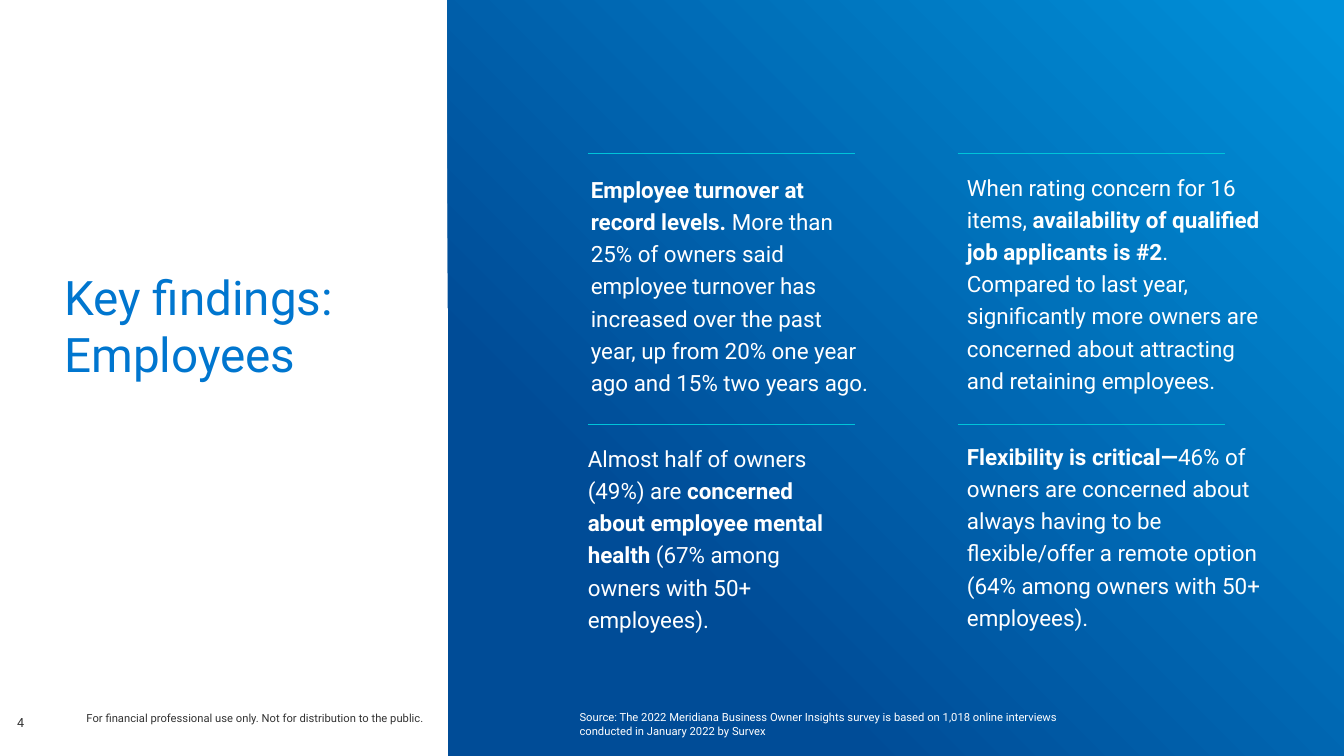
"""Build the employee key findings slide."""
from pptx import Presentation
from pptx.dml.color import RGBColor
from pptx.enum.shapes import MSO_CONNECTOR as CONNECTOR, MSO_SHAPE as SHAPE
from pptx.enum.text import MSO_ANCHOR as ANCHOR
from pptx.oxml.ns import qn
from pptx.util import Inches, Pt
from lxml.etree import SubElement

FONT = "Roboto"
WHITE, TITLE_BLUE, GRAY, CYAN = "FFFFFF", "0076CF", "333333", "00C4D9"
GRADIENT = [("004C97", 0.25), ("0091DA", 0.99)]
PANEL_LEFT = 4.44
RULE_LEFTS, RULE_TOPS, RULE_WIDTH = (5.83, 9.5), (1.52, 4.21), 2.65

FINDINGS = [
    ((5.86, 1.69, 2.78, 2.35), [
        ("Employee turnover at record levels. ", True),
        ("More than 25% of owners said employee turnover has increased over the past year, "
         "up from 20% one year ago and 15% two years ago.", False)]),
    ((9.59, 1.67, 2.98, 2.33), [
        ("When rating concern for 16 items, ", False),
        ("availability of qualified job applicants is #2", True),
        (". Compared to last year, significantly more owners are concerned about "
         "attracting and retaining employees.", False)]),
    ((5.83, 4.36, 2.65, 2.17), [
        ("Almost half of owners (49%) are ", False),
        ("concerned about employee mental health ", True),
        ("(67% among owners with 50+ employees).", False)]),
    ((9.59, 4.34, 3.12, 2.17), [
        ("Flexibility is critical—", True),
        ("46% of owners are concerned about always having to be flexible/offer a remote "
         "option (64% among owners with 50+ employees).", False)]),
]
TITLE = ((0.64, 2.66, 3.3, 0.5), "Key findings: Employees")
PAGE_NUMBER = ((0.17, 6.83, 0.46, 0.41), "4")
FOOTNOTES = [
    ((0.76, 7.01, 6.67, 0.24), GRAY,
     "For financial professional use only. Not for distribution to the public."),
    ((5.65, 7, 5.37, 0.37), WHITE,
     "Source: The 2022 Meridiana Business Owner Insights survey is based on 1,018 online "
     "interviews conducted in January 2022 by Survex"),
]


def color(hex_value):
    return RGBColor.from_string(hex_value)


def add_text(slide, box, runs, size, hex_value, spacing=None, inset=(0, 0), anchor=ANCHOR.TOP):
    frame = slide.shapes.add_textbox(*map(Inches, box)).text_frame
    frame.word_wrap = True
    frame.vertical_anchor = anchor
    frame.margin_left = frame.margin_right = Inches(inset[0])
    frame.margin_top = frame.margin_bottom = Inches(inset[1])
    paragraph = frame.paragraphs[0]
    if spacing:
        paragraph.line_spacing = spacing
    for text, bold in runs:
        run = paragraph.add_run()
        run.text = text
        run.font.name, run.font.size, run.font.bold = FONT, Pt(size), bold
        run.font.color.rgb = color(hex_value)


def add_panel(slide, width, height):
    panel = slide.shapes.add_shape(SHAPE.RECTANGLE, Inches(PANEL_LEFT), 0, width, height)
    panel.shadow.inherit = False
    panel.line.fill.background()
    panel.fill.gradient()
    panel.fill.gradient_angle = 45
    for stop, (hex_value, position) in zip(panel.fill.gradient_stops, GRADIENT):
        stop.color.rgb = color(hex_value)
        stop.position = position


def add_rule(slide, left, top):
    ends = map(Inches, (left, top, left + RULE_WIDTH, top))
    rule = slide.shapes.add_connector(CONNECTOR.STRAIGHT, *ends)
    rule.line.color.rgb = color(CYAN)
    rule.line.width = Pt(0.75)
    SubElement(rule._element.spPr, qn("a:effectLst"))


def main():
    presentation = Presentation()
    presentation.slide_width, presentation.slide_height = Inches(13.33), Inches(7.5)
    slide = presentation.slides.add_slide(presentation.slide_layouts[6])
    add_panel(slide, presentation.slide_width - Inches(PANEL_LEFT), presentation.slide_height)

    box, text = TITLE
    add_text(slide, box, [(text, False)], 34, TITLE_BLUE)
    box, text = PAGE_NUMBER
    add_text(slide, box, [(text, False)], 9, GRAY, anchor=ANCHOR.BOTTOM)
    for box, runs in FINDINGS:
        add_text(slide, box, runs, 16, WHITE, spacing=1.2)
    for top in RULE_TOPS:
        for left in RULE_LEFTS:
            add_rule(slide, left, top)
    for box, hex_value, text in FOOTNOTES:
        add_text(slide, box, [(text, False)], 8, hex_value, inset=(0.1, 0.05))

    presentation.save("out.pptx")


if __name__ == "__main__":
    main()
